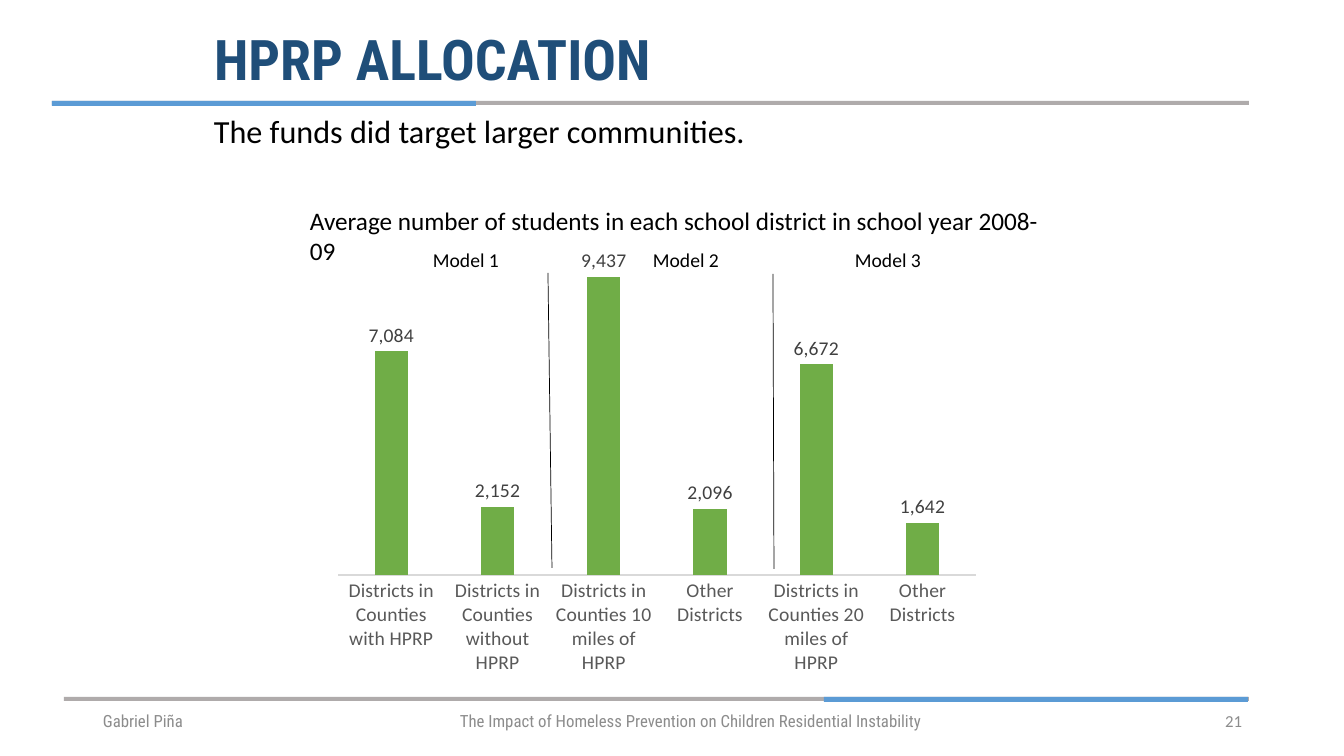
from lxml import etree
from pptx import Presentation
from pptx.chart.data import CategoryChartData
from pptx.dml.color import RGBColor
from pptx.enum.chart import XL_CHART_TYPE, XL_LABEL_POSITION, XL_TICK_MARK
from pptx.enum.shapes import MSO_CONNECTOR, MSO_SHAPE
from pptx.enum.text import MSO_ANCHOR, PP_ALIGN
from pptx.oxml.ns import qn
from pptx.util import Pt

LEFT, RIGHT = PP_ALIGN.LEFT, PP_ALIGN.RIGHT
TOP, MIDDLE = MSO_ANCHOR.TOP, MSO_ANCHOR.MIDDLE
RECT = MSO_SHAPE.RECTANGLE
STRAIGHT = MSO_CONNECTOR.STRAIGHT
COLUMN = XL_CHART_TYPE.COLUMN_CLUSTERED
OUTSIDE_END = XL_LABEL_POSITION.OUTSIDE_END
NO_TICKS = XL_TICK_MARK.NONE

PX_PER_INCH = 100.8
BODY_FONT, HEAD_FONT = "Calibri", "Roboto Condensed"
BLACK, GREY, BLUE, FOOTER_GREY = "000000", "AFABAB", "5B9BD5", "8C8C8C"

DISTRICTS = [
    ("Districts in Counties with HPRP", 7084),
    ("Districts in Counties without HPRP", 2152),
    ("Districts in Counties 10 miles of HPRP", 9437),
    ("Other Districts", 2096),
    ("Districts in Counties 20 miles of HPRP", 6672),
    ("Other Districts", 1642),
]


def px(*lengths):
    return [round(n * 914400 / PX_PER_INCH) for n in lengths]


def rgb(color):
    return RGBColor.from_string(color)


def style_font(font, size, color=BLACK, name=BODY_FONT, bold=False):
    font.name, font.size, font.bold = name, Pt(size), bold
    font.color.rgb = rgb(color)


def write(sp, text, size, color=BLACK, name=BODY_FONT, bold=False,
          align=LEFT, anchor=TOP, wrap=True):
    tf = sp.text_frame
    tf.word_wrap = wrap
    tf.vertical_anchor = anchor
    p = tf.paragraphs[0]
    p.alignment = align
    r = p.add_run()
    r.text = text
    style_font(r.font, size, color, name, bold)
    return p


def add_text(s, box, text, size, **style):
    return write(s.shapes.add_textbox(*px(*box)), text, size, **style)


def add_title(s, box, text):
    sp = s.shapes.title
    sp.left, sp.top, sp.width, sp.height = px(*box)
    p = write(sp, text, 40, "1F4E79", HEAD_FONT, True, anchor=MIDDLE)
    p.line_spacing = 0.9


def add_bar(s, box, color):
    sp = s.shapes.add_shape(RECT, *px(*box))
    sp.shadow.inherit = False
    sp.fill.solid()
    sp.fill.fore_color.rgb = rgb(color)
    sp.line.fill.background()


def add_divider(s, ends):
    line = s.shapes.add_connector(STRAIGHT, *px(*ends))
    line.line.color.rgb = rgb(BLACK)
    line.line.width = Pt(0.5)
    etree.SubElement(line._element.spPr, qn("a:effectLst"))


def add_column_chart(s, box):
    data = CategoryChartData(number_format="#,##0")
    data.categories = [name for name, _ in DISTRICTS]
    data.add_series("Series 1", [students for _, students in DISTRICTS])
    chart = s.shapes.add_chart(COLUMN, *px(*box), data).chart
    chart.has_legend = chart.has_title = False
    style_font(chart.font, 14)

    values = chart.value_axis
    values.minimum_scale, values.maximum_scale = 0, 10000
    values.has_major_gridlines = values.visible = False
    cats = chart.category_axis
    cats.major_tick_mark = cats.minor_tick_mark = NO_TICKS
    cats.format.line.color.rgb = rgb("D9D9D9")
    cats.format.line.width = Pt(0.75)
    style_font(cats.tick_labels.font, 14, "595959")

    plot = chart.plots[0]
    plot.gap_width, plot.overlap = 219, -27
    plot.vary_by_categories = False
    fill = plot.series[0].format.fill
    fill.solid()
    fill.fore_color.rgb = rgb("70AD47")
    plot.has_data_labels = True
    labels = plot.data_labels
    labels.show_value = True
    labels.position = OUTSIDE_END
    labels.number_format = "#,##0"
    labels.number_format_is_linked = False
    style_font(labels.font, 14, "404040")


def main():
    prs = Presentation()
    prs.slide_width, prs.slide_height = px(1344, 756)
    s = prs.slides.add_slide(prs.slide_layouts[5])

    add_bar(s, (52, 101, 1197, 4), GREY)
    add_bar(s, (52, 101, 424, 5), BLUE)
    add_bar(s, (64, 697, 1185, 4), GREY)
    add_bar(s, (824, 697, 424, 5), BLUE)

    add_title(s, (204, 24, 938, 77), "HPRP ALLOCATION")
    p = add_text(s, (204, 111, 938, 60),
                 "The funds did target larger communities.", 23)
    p.line_spacing, p.space_before = 0.9, Pt(7.5)

    add_column_chart(s, (325, 249, 664, 435))
    add_text(s, (300, 200, 772, 40), "Average number of students in each "
             "school district in school year 2008-09", 18)
    for ends in ((548, 273, 552, 568), (773, 274, 774, 569)):
        add_divider(s, ends)
    for number, left in enumerate((423, 643, 845), 1):
        add_text(s, (left, 243, 87, 34), f"Model {number}", 14, wrap=False)

    footer = {"color": FOOTER_GREY, "anchor": MIDDLE}
    add_text(s, (93, 701, 302, 40), "Gabriel Piña", 12,
             name=HEAD_FONT, **footer)
    add_text(s, (450, 701, 523, 40), "The Impact of Homeless Prevention on "
             "Children Residential Instability", 12, name=HEAD_FONT, **footer)
    add_text(s, (950, 701, 302, 40), "21", 12, align=RIGHT, **footer)

    prs.save("out.pptx")


if __name__ == "__main__":
    main()
